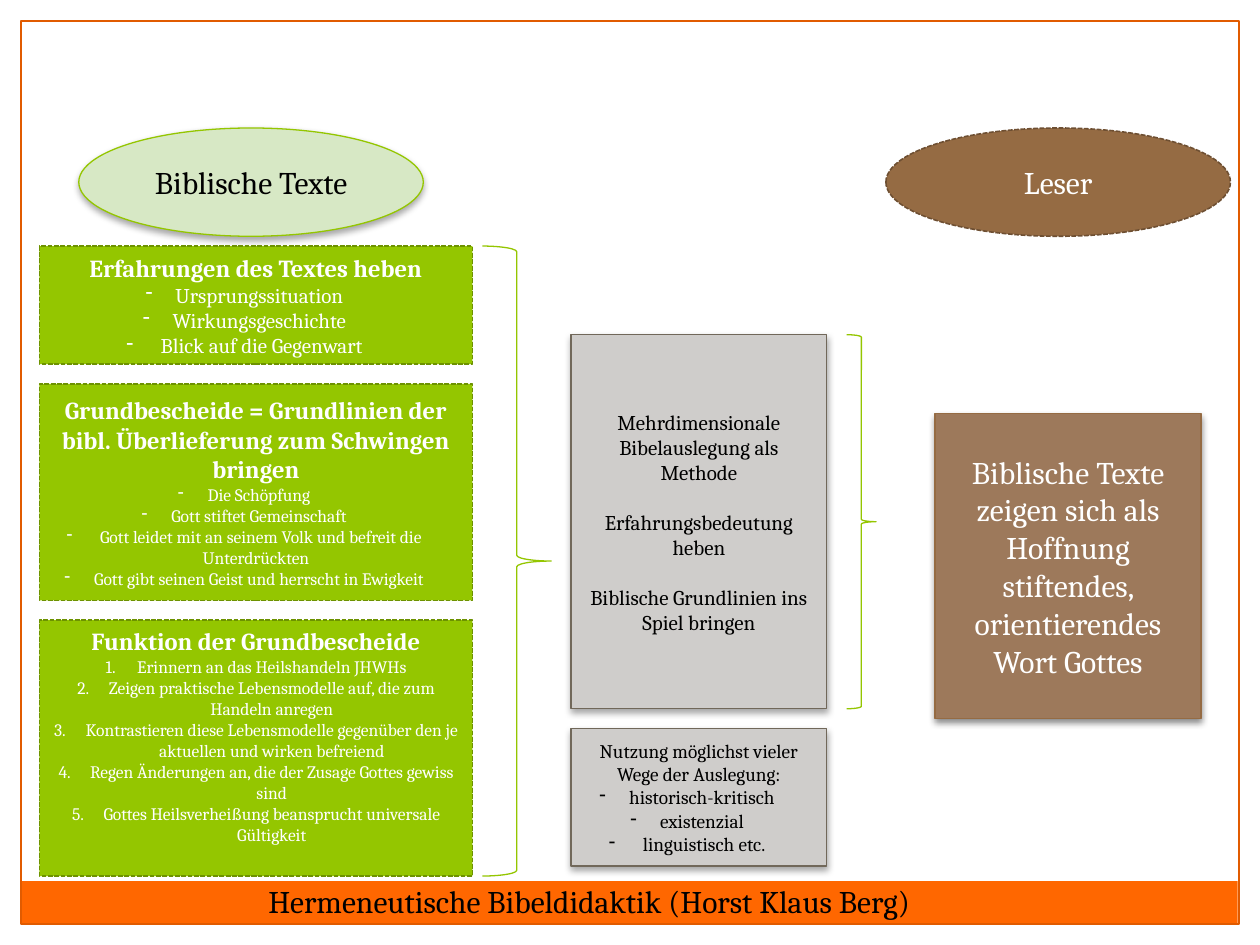
"""Build a slide on hermeneutic Bible didactics, laid out on a grid of 64 columns and 48 rows."""
import lxml.etree
import pptx
import pptx.dml.color
import pptx.enum.dml
import pptx.enum.shapes
import pptx.enum.text
import pptx.oxml.ns
import pptx.util

presentation = pptx.Presentation()
presentation.slide_width = pptx.util.Inches(10)
presentation.slide_height = pptx.util.Inches(7.5)
slide = presentation.slides.add_slide(presentation.slide_layouts[6])
column = presentation.slide_width / 64
row = presentation.slide_height / 48
qn = pptx.oxml.ns.qn
kinds = pptx.enum.shapes.MSO_SHAPE
center = pptx.enum.text.PP_ALIGN.CENTER


def color(value):
    return pptx.dml.color.RGBColor.from_string(value)


def add_box(kind, place, fill=None, line=None, dashed=False, shadow=0, paragraphs=(), ink="FFFFFF"):
    left, top, width, height = place
    shape = slide.shapes.add_shape(
        kind, round(left * column), round(top * row), round(width * column), round(height * row))
    shape.shadow.inherit = False
    if fill:
        shape.fill.solid()
        shape.fill.fore_color.rgb = color(fill)
    else:
        shape.fill.background()
    if line:
        shape.line.color.rgb = color(line)
        shape.line.width = pptx.util.Pt(0.9 if dashed else 0.75)
        if dashed:
            shape.line.dash_style = pptx.enum.dml.MSO_LINE.SQUARE_DOT
    else:
        shape.line.fill.background()
    if shadow:
        effects = shape._element.spPr.find(qn("a:effectLst"))
        outer = lxml.etree.SubElement(
            effects, qn("a:outerShdw"), blurRad=str(pptx.util.Pt(4)), dist=str(pptx.util.Pt(2)),
            dir="5400000", rotWithShape="0")
        shade = lxml.etree.SubElement(outer, qn("a:srgbClr"), val="000000")
        lxml.etree.SubElement(shade, qn("a:alpha"), val=str(shadow * 1000))
    frame = shape.text_frame
    frame.word_wrap = True
    frame.vertical_anchor = pptx.enum.text.MSO_ANCHOR.MIDDLE
    for index, (text, size, style) in enumerate(paragraphs):
        paragraph = frame.add_paragraph() if index else frame.paragraphs[0]
        paragraph.alignment = center
        run = paragraph.add_run()
        run.text = text
        run.font.name = "Cambria"
        run.font.size = pptx.util.Pt(size)
        run.font.bold = style == "heading"
        run.font.color.rgb = color(ink)
        properties = paragraph._p.get_or_add_pPr()
        if style == "gap":
            paragraph.space_before = pptx.util.Pt(14)
        elif style == "dash":
            lxml.etree.SubElement(properties, qn("a:buFontTx"))
            lxml.etree.SubElement(properties, qn("a:buChar"), char="-")
        elif style == "number":
            properties.set("marL", str(pptx.util.Inches(0.25)))
            properties.set("indent", str(-pptx.util.Inches(0.25)))
            lxml.etree.SubElement(properties, qn("a:buAutoNum"), type="arabicPeriod")
    return shape


add_box(kinds.RECTANGLE, (1.06, 44.75, 61.8, 2.16), fill="FF6700")
add_box(kinds.RECTANGLE, (1.06, 1.06, 61.87, 45.87), line="E15B00")

title = slide.shapes.add_textbox(
    round(13 * column), round(44.5 * row), round(37 * column), round(2.58 * row))
title.text_frame.word_wrap = True
run = title.text_frame.paragraphs[0].add_run()
run.text = "Hermeneutische Bibeldidaktik (Horst Klaus Berg)"
run.font.name = "Cambria"
run.font.size = pptx.util.Pt(18)
run.font.color.rgb = color("000000")

add_box(kinds.OVAL, (4, 6.5, 17.5, 5.5), "D7E8C5", "94C600", shadow=35,
        paragraphs=[("Biblische Texte", 18, "plain")], ink="000000")
add_box(kinds.OVAL, (45, 6.5, 17.5, 5.5), "956B43", "6E4F32", dashed=True,
        paragraphs=[("Leser", 18, "plain")])

text_steps = [
    (6, "Erfahrungen des Textes heben", 12, "dash",
     ["Ursprungssituation", "Wirkungsgeschichte", " Blick auf die Gegenwart"]),
    (11, "Grundbescheide = Grundlinien der bibl. Überlieferung zum Schwingen bringen", 10, "dash",
     ["Die Schöpfung", "Gott stiftet Gemeinschaft",
      " Gott leidet mit an seinem Volk und befreit die Unterdrückten",
      "Gott gibt seinen Geist und herrscht in Ewigkeit"]),
    (13, "Funktion der Grundbescheide", 10, "number",
     ["Erinnern an das Heilshandeln JHWHs",
      "Zeigen praktische Lebensmodelle auf, die zum Handeln anregen",
      "Kontrastieren diese Lebensmodelle gegenüber den je aktuellen und wirken befreiend",
      "Regen Änderungen an, die der Zusage Gottes gewiss sind",
      "Gottes Heilsverheißung beansprucht universale Gültigkeit"]),
]
top = 12.5
for height, heading, size, style, items in text_steps:
    step = add_box(kinds.RECTANGLE, (2, top, 22, height), "94C600", "6D9200", dashed=True,
                   paragraphs=[(heading, 14, "heading")] + [(item, size, style) for item in items])
    top += height + 1
step.text_frame.margin_bottom = pptx.util.Inches(0.25)

for place in [(24.5, 12.5, 3.5, 32), (43, 17, 1.5, 19)]:
    add_box(kinds.RIGHT_BRACE, place, line="94C600")

methods = [
    (17, 19, [("Mehrdimensionale Bibelauslegung als Methode", 12, "plain"),
              ("Erfahrungsbedeutung heben", 12, "gap"),
              ("Biblische Grundlinien ins Spiel bringen", 12, "gap")]),
    (37, 7, [("Nutzung möglichst vieler Wege der Auslegung:", 11, "plain"),
             ("historisch-kritisch", 11, "dash"),
             ("existenzial", 11, "dash"),
             (" linguistisch etc.", 11, "dash")]),
]
for top, height, paragraphs in methods:
    add_box(kinds.RECTANGLE, (29, top, 13, height), "CFCDCB", "71685A", shadow=35,
            paragraphs=paragraphs, ink="000000")

add_box(kinds.RECTANGLE, (47.5, 21, 13.5, 15.5), "9D795B", "956B43", shadow=45,
        paragraphs=[("Biblische Texte zeigen sich als Hoffnung stiftendes, orientierendes Wort Gottes",
                     18, "plain")])

presentation.save("out.pptx")
